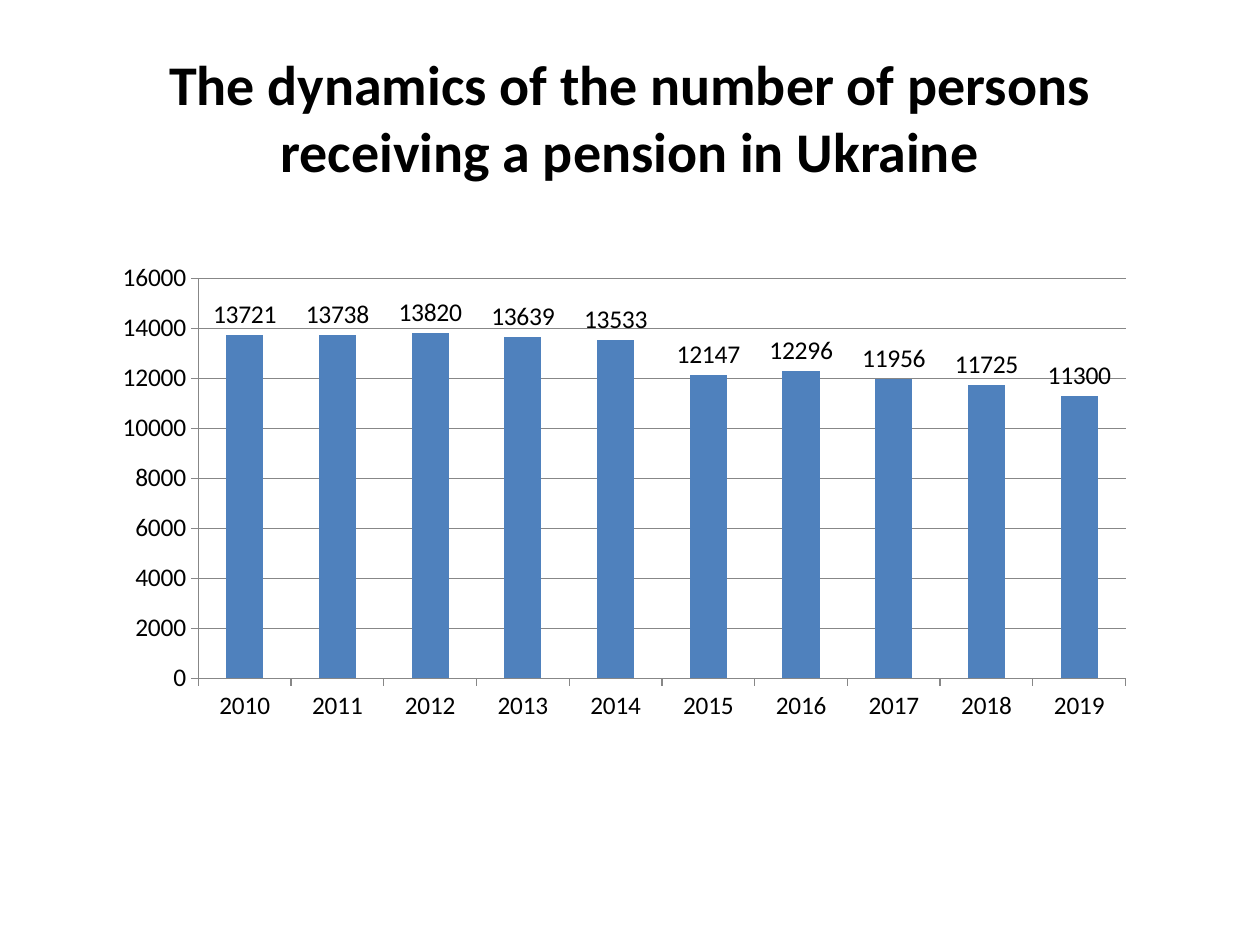
from lxml.etree import SubElement
from pptx import Presentation
from pptx.chart.data import CategoryChartData
from pptx.dml.color import RGBColor
from pptx.enum.chart import XL_CHART_TYPE, XL_LABEL_POSITION, XL_TICK_MARK
from pptx.enum.text import MSO_ANCHOR, PP_ALIGN
from pptx.oxml.ns import qn
from pptx.util import Inches, Pt

WIDE, HIGH = Inches(10), Inches(7.5)
FONT = "Calibri"
COLORS = {"text": "000000", "bar": "4F81BD", "line": "878787"}
COUNTS = [13721, 13738, 13820, 13639, 13533, 12147, 12296, 11956, 11725, 11300]
YEARS = [str(2010 + i) for i in range(len(COUNTS))]


def tint(name):
    return RGBColor.from_string(COLORS[name])


def place(x, y, w, h):
    return int(WIDE * x), int(HIGH * y), int(WIDE * w), int(HIGH * h)


def style(font, size, bold=False):
    font.name, font.size, font.bold = FONT, Pt(size), bold
    font.color.rgb = tint("text")


def add_text(slide, text, box, size=32, bold=False, align=PP_ALIGN.CENTER):
    frame = slide.shapes.add_textbox(*box).text_frame
    frame.word_wrap = True
    frame.vertical_anchor = MSO_ANCHOR.MIDDLE
    para = frame.paragraphs[0]
    para.alignment = align
    run = para.add_run()
    run.text = text
    style(run.font, size, bold)


def stroke(line):
    line.color.rgb = tint("line")
    line.width = Pt(0.75)


def set_axis(axis, size):
    axis.major_tick_mark = XL_TICK_MARK.OUTSIDE
    axis.minor_tick_mark = XL_TICK_MARK.NONE
    style(axis.tick_labels.font, size)
    stroke(axis.format.line)


def fit_plot(chart, **shares):
    area = chart.element.find(".//" + qn("c:plotArea"))
    for old in area.findall(qn("c:layout")):
        area.remove(old)
    layout = SubElement(area, qn("c:layout"))
    area.insert(0, layout)
    manual = SubElement(layout, qn("c:manualLayout"))
    marks = {"layoutTarget": "inner", "xMode": "edge", "yMode": "edge", **shares}
    for tag, val in marks.items():
        SubElement(manual, qn("c:" + tag)).set("val", str(val))


def add_bars(slide, box):
    data = CategoryChartData()
    data.categories = YEARS
    data.add_series("Series 1", COUNTS)
    kind = XL_CHART_TYPE.COLUMN_CLUSTERED
    chart = slide.shapes.add_chart(kind, *box, data).chart
    chart.has_legend = chart.has_title = False
    style(chart.font, 10)
    set_axis(chart.category_axis, 14.4)
    values = chart.value_axis
    set_axis(values, 14.5)
    values.minimum_scale, values.maximum_scale = 0, 16000
    values.major_unit = 2000
    values.has_major_gridlines = True
    stroke(values.major_gridlines.format.line)
    plot = chart.plots[0]
    plot.gap_width = 150
    plot.vary_by_categories = False
    bars = plot.series[0]
    bars.format.fill.solid()
    bars.format.fill.fore_color.rgb = tint("bar")
    labels = bars.data_labels
    labels.show_value = True
    labels.position = XL_LABEL_POSITION.OUTSIDE_END
    style(labels.font, 14.6)
    fit_plot(chart, x=0.09, y=0.05, w=0.89, h=0.84)


def main():
    deck = Presentation()
    deck.slide_width, deck.slide_height = WIDE, HIGH
    slide = deck.slides.add_slide(deck.slide_layouts[6])
    title = "The dynamics of the number of persons receiving a pension in Ukraine"
    add_text(slide, title, place(0.05, 0.04, 0.9, 1 / 6), size=32, bold=True)
    add_bars(slide, (Inches(0.83), Inches(2.02), Inches(8.27), Inches(3.78)))
    deck.save("out.pptx")


if __name__ == "__main__":
    main()
